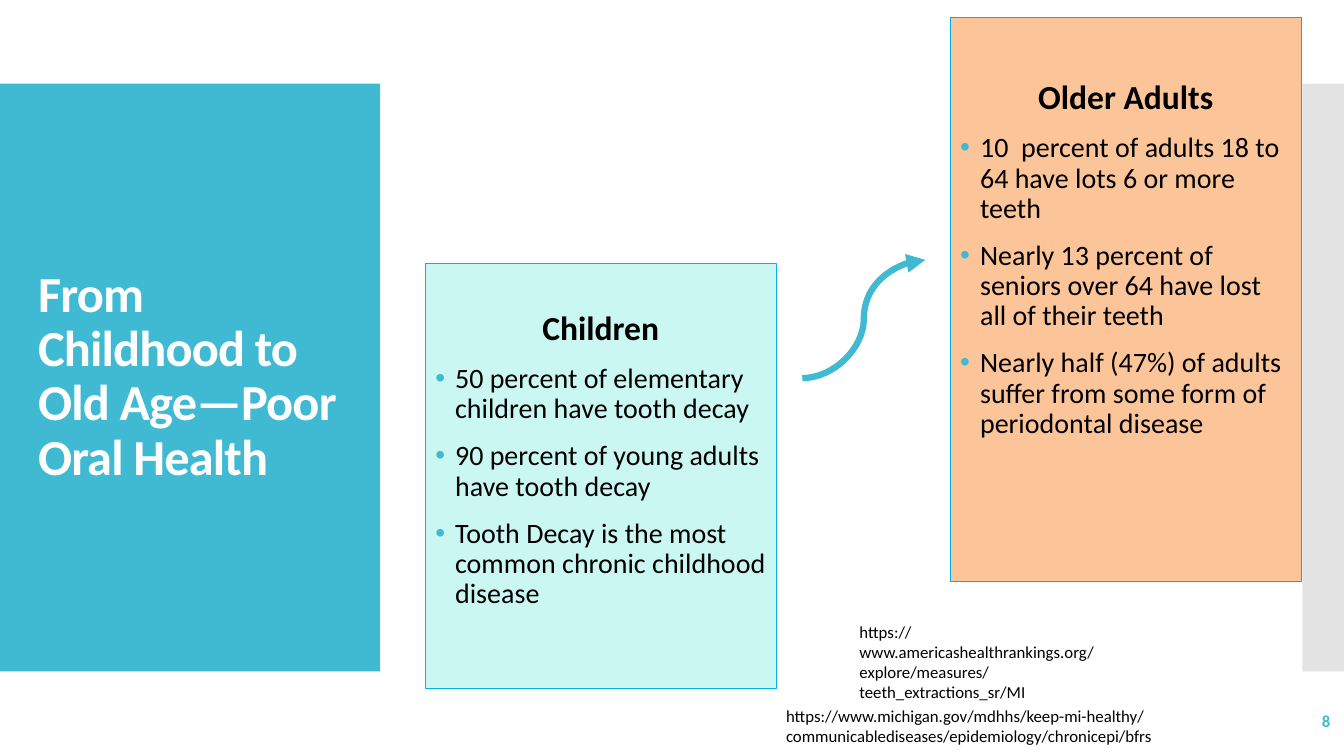
"""Build the oral health slide comparing children with older adults."""
from dataclasses import dataclass

from lxml.etree import SubElement
from pptx import Presentation
from pptx.dml.color import RGBColor
from pptx.enum.shapes import MSO_CONNECTOR, MSO_SHAPE
from pptx.enum.text import MSO_ANCHOR, PP_ALIGN
from pptx.oxml.ns import qn
from pptx.shapes.autoshape import Shape
from pptx.slide import Slide
from pptx.text.text import TextFrame
from pptx.util import Cm, Pt


@dataclass(frozen=True)
class Theme:
    """Colours, font and type sizes of the slide."""
    font: str = "Calibri"
    accent: str = "40BAD2"
    outline: str = "00B0F0"
    grey: str = "C8C8C8"
    mint: str = "CAF7F1"
    peach: str = "FCC599"
    white: str = "FFFFFF"
    black: str = "000000"
    title_size: int = 36
    heading_size: int = 24
    body_size: int = 20
    small_size: int = 12
    paragraph_gap: int = 12
    line_spacing: float = 0.9


@dataclass(frozen=True)
class Box:
    """A rectangle in centimetres."""
    left: float
    top: float
    width: float
    height: float

    def lengths(self) -> tuple[Cm, Cm, Cm, Cm]:
        """Return left, top, width and height as lengths."""
        return Cm(self.left), Cm(self.top), Cm(self.width), Cm(self.height)


@dataclass(frozen=True)
class Card:
    """A filled card with a heading and bullets."""
    box: Box
    fill: str
    bottom_inset: float
    heading: str
    bullets: tuple[str, ...]


@dataclass(frozen=True)
class Link:
    """A source address and its place."""
    box: Box
    address: str


THEME = Theme()
TITLE_PANEL = Box(0, 2.11, 9.58, 14.81)
EDGE_PANEL = Box(32.82, 2.11, 1.05, 14.81)
TITLE_BOX = Box(0.71, 3.12, 8.18, 12.78)
NUMBER_BOX = Box(29.54, 17.65, 4.24, 1.02)
CARD_TOP_INSET = 0.55
BULLET_INDENT = 0.5

CARDS = (
    Card(Box(10.72, 6.65, 8.84, 10.69), THEME.mint, 1.33, "Children", (
        "50 percent of elementary children have tooth decay",
        "90 percent of young adults have tooth decay",
        "Tooth Decay is the most common chronic childhood disease",
    )),
    Card(Box(23.95, 0.43, 8.84, 14.22), THEME.peach, 2.53, "Older Adults", (
        "10  percent of adults 18 to 64 have lots 6 or more teeth",
        "Nearly 13 percent of seniors over 64 have lost all of their teeth",
        "Nearly half (47%) of adults suffer from some form of periodontal disease",
    )),
)

LINKS = (
    Link(Box(19.56, 17.65, 11.86, 1.27),
         "https://www.michigan.gov/mdhhs/keep-mi-healthy/"
         "communicablediseases/epidemiology/chronicepi/bfrs"),
    Link(Box(21.41, 15.54, 7.67, 1.8),
         "https://www.americashealthrankings.org/explore/measures/"
         "teeth_extractions_sr/MI"),
)


def write_text(frame: TextFrame, text: str, *, size: int, color: str = THEME.black,
               bold: bool = False, align: PP_ALIGN = PP_ALIGN.LEFT,
               line_spacing: float = 1.0, bullet: bool = False,
               tracking: int = 0) -> None:
    """Add one formatted paragraph to a text frame."""
    is_first = not frame.paragraphs[0].runs
    paragraph = frame.paragraphs[0] if is_first else frame.add_paragraph()
    if bullet:
        properties = paragraph._p.get_or_add_pPr()
        properties.set("marL", str(Cm(BULLET_INDENT)))
        properties.set("indent", str(-Cm(BULLET_INDENT)))
        bullet_color = SubElement(properties, qn("a:buClr"))
        SubElement(bullet_color, qn("a:srgbClr"), val=THEME.accent)
        SubElement(properties, qn("a:buFont"), typeface="Arial")
        SubElement(properties, qn("a:buChar"), char="•")
    paragraph.alignment = align
    paragraph.line_spacing = line_spacing
    paragraph.space_before = Pt(0 if is_first else THEME.paragraph_gap)
    run = paragraph.add_run()
    run.text = text
    run.font.name = THEME.font
    run.font.size = Pt(size)
    run.font.bold = bold
    run.font.color.rgb = RGBColor.from_string(color)
    if tracking:
        run._r.get_or_add_rPr().set("spc", str(tracking))


def add_text_box(slide: Slide, box: Box,
                 anchor: MSO_ANCHOR = MSO_ANCHOR.MIDDLE) -> TextFrame:
    """Add a wrapping text box and return its frame."""
    frame = slide.shapes.add_textbox(*box.lengths()).text_frame
    frame.word_wrap = True
    frame.vertical_anchor = anchor
    return frame


def add_panel(slide: Slide, box: Box, fill: str) -> Shape:
    """Add a plain filled rectangle."""
    shape = slide.shapes.add_shape(MSO_SHAPE.RECTANGLE, *box.lengths())
    shape.shadow.inherit = False
    shape.fill.solid()
    shape.fill.fore_color.rgb = RGBColor.from_string(fill)
    shape.line.fill.background()
    return shape


def add_card(slide: Slide, card: Card) -> None:
    """Add an outlined card with its heading and bullets."""
    shape = add_panel(slide, card.box, card.fill)
    shape.line.color.rgb = RGBColor.from_string(THEME.outline)
    shape.line.width = Pt(0.75)
    frame = shape.text_frame
    frame.word_wrap = True
    frame.vertical_anchor = MSO_ANCHOR.MIDDLE
    frame.margin_top = Cm(CARD_TOP_INSET)
    frame.margin_bottom = Cm(card.bottom_inset)
    write_text(frame, card.heading, size=THEME.heading_size, bold=True,
               align=PP_ALIGN.CENTER, line_spacing=THEME.line_spacing)
    for text in card.bullets:
        write_text(frame, text, size=THEME.body_size, bullet=True,
                   line_spacing=THEME.line_spacing)


def add_curved_arrow(slide: Slide) -> None:
    """Add the curved arrow rising between the cards."""
    arrow = slide.shapes.add_connector(
        MSO_CONNECTOR.CURVE, Cm(20.22), Cm(9.53), Cm(23.32), Cm(6.55))
    arrow.line.color.rgb = RGBColor.from_string(THEME.accent)
    arrow.line.width = Pt(4.5)
    SubElement(arrow.line._get_or_add_ln(), qn("a:tailEnd"), type="triangle")
    SubElement(arrow._element.spPr, qn("a:effectLst"))


def main() -> None:
    """Build and save the slide."""
    presentation = Presentation()
    presentation.slide_width = Cm(33.87)
    presentation.slide_height = Cm(19.05)
    slide = presentation.slides.add_slide(presentation.slide_layouts[6])

    add_panel(slide, TITLE_PANEL, THEME.accent)
    edge = add_panel(slide, EDGE_PANEL, THEME.grey)
    edge_color = edge._element.spPr.find(f"{qn('a:solidFill')}/{qn('a:srgbClr')}")
    SubElement(edge_color, qn("a:alpha"), val="50000")

    write_text(add_text_box(slide, TITLE_BOX),
               "From Childhood to Old Age—Poor Oral Health",
               size=THEME.title_size, color=THEME.white, bold=True,
               line_spacing=THEME.line_spacing, tracking=-60)
    for card in CARDS:
        add_card(slide, card)
    add_curved_arrow(slide)
    for link in LINKS:
        write_text(add_text_box(slide, link.box, MSO_ANCHOR.TOP), link.address,
                   size=THEME.small_size)
    write_text(add_text_box(slide, NUMBER_BOX), "8", size=THEME.small_size,
               color=THEME.accent, bold=True, align=PP_ALIGN.RIGHT)
    presentation.save("out.pptx")


if __name__ == "__main__":
    main()
